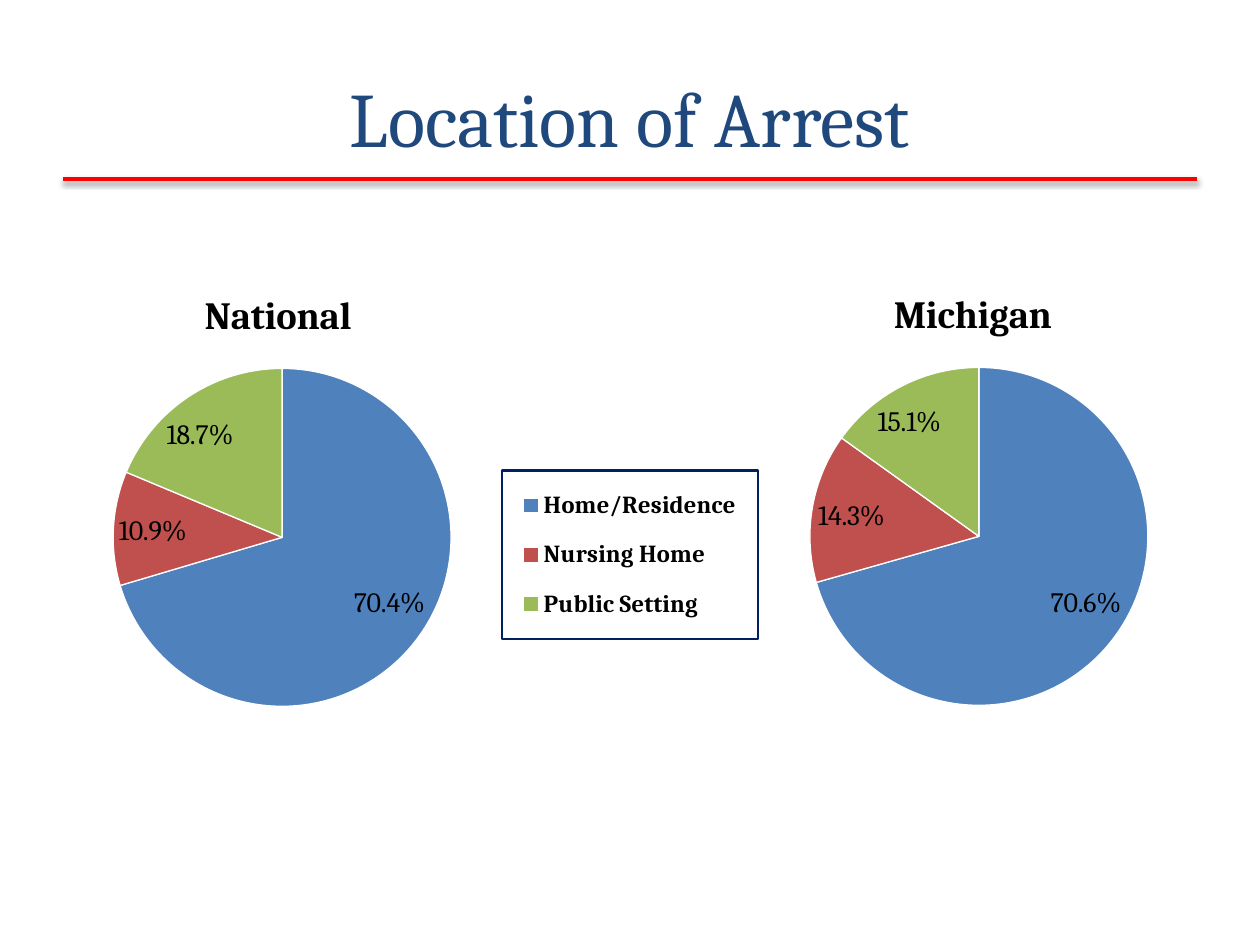
from lxml.etree import SubElement
from pptx import Presentation
from pptx.chart.data import CategoryChartData
from pptx.dml.color import RGBColor
from pptx.enum.chart import XL_CHART_TYPE, XL_LABEL_POSITION, XL_LEGEND_POSITION
from pptx.enum.shapes import MSO_CONNECTOR
from pptx.enum.text import MSO_ANCHOR, PP_ALIGN
from pptx.oxml import parse_xml
from pptx.oxml.ns import nsdecls, qn
from pptx.util import Cm, Pt

FONT = "Cambria"
SLICE_COLORS = ("4F81BD", "C0504D", "9BBB59")
PLOT_LAYOUT = dict(layoutTarget="inner", xMode="edge", yMode="edge",
                   x=0.103, y=0.276, w=0.548, h=0.542)


def color(hex_code):
    return RGBColor.from_string(hex_code)


def set_font(font, size, hex_code, bold=False):
    font.name = FONT
    font.size = Pt(size)
    font.bold = bold
    font.color.rgb = color(hex_code)


def set_layout(parent, settings, after=None):
    for previous in parent.findall(qn("c:layout")):
        parent.remove(previous)
    layout = parse_xml(f"<c:layout {nsdecls('c')}/>")
    manual = SubElement(layout, qn("c:manualLayout"))
    for key, value in settings.items():
        SubElement(manual, qn(f"c:{key}")).set("val", str(value))
    position = 0 if after is None else parent.index(parent.find(qn(after))) + 1
    parent.insert(position, layout)


def add_title(slide, text):
    title = slide.shapes.title
    title.left, title.top = Cm(1.27), Cm(0.76)
    title.width, title.height = Cm(22.86), Cm(3.18)
    title.text_frame.text = text
    title.text_frame.vertical_anchor = MSO_ANCHOR.MIDDLE
    heading = title.text_frame.paragraphs[0]
    heading.alignment = PP_ALIGN.CENTER
    set_font(heading.font, 44, "1F497D")


def add_title_rule(slide):
    rule = slide.shapes.add_connector(
        MSO_CONNECTOR.STRAIGHT, Cm(1.27), Cm(3.61), Cm(24.13), Cm(3.61))
    rule.line.color.rgb = color("FF0000")
    rule.line.width = Pt(2)
    rule._element.spPr.append(parse_xml(
        f"<a:effectLst {nsdecls('a')}>"
        f'<a:outerShdw blurRad="{Pt(3.1)}" dist="{Pt(1.6)}" dir="5400000" rotWithShape="0">'
        '<a:srgbClr val="000000"><a:alpha val="38000"/></a:srgbClr>'
        "</a:outerShdw></a:effectLst>"))


def add_pie(slide, region, categories, shares, box, title_x):
    data = CategoryChartData()
    data.categories = categories
    data.add_series("Series 1", shares)
    chart = slide.shapes.add_chart(
        XL_CHART_TYPE.PIE, *(Cm(length) for length in box), data).chart
    set_font(chart.font, 18, "000000")
    chart.has_legend = False

    chart.has_title = True
    heading = chart.chart_title.text_frame
    heading.text = region
    set_font(heading.paragraphs[0].font, 22, "000000", bold=True)
    chart.chart_title.include_in_layout = False
    set_layout(chart.chart_title._element,
               dict(xMode="edge", yMode="edge", x=title_x, y=0.14), "c:tx")
    set_layout(chart._chartSpace.chart.plotArea, PLOT_LAYOUT)

    pie = chart.plots[0]
    pie.vary_by_categories = True
    for index, slice_color in enumerate(SLICE_COLORS):
        area = pie.series[0].points[index].format
        area.fill.solid()
        area.fill.fore_color.rgb = color(slice_color)
        area.line.color.rgb = color("FFFFFF")
        area.line.width = Pt(0.75)

    labels = pie.series[0].data_labels
    labels.show_percentage = True
    labels.show_value = False
    labels.number_format = "0.0%"
    labels.number_format_is_linked = False
    labels.position = XL_LABEL_POSITION.BEST_FIT
    set_font(labels.font, 16, "000000")
    return chart


def add_legend(chart):
    chart.has_legend = True
    legend = chart.legend
    legend.position = XL_LEGEND_POSITION.RIGHT
    legend.include_in_layout = False
    set_font(legend.font, 14, "000000", bold=True)
    set_layout(legend._element,
               dict(xMode="edge", yMode="edge", x=0.656, y=0.44, w=0.325, h=0.27),
               "c:legendPos")
    legend._element.find(qn("c:overlay")).addnext(parse_xml(
        f"<c:spPr {nsdecls('c', 'a')}><a:ln w=\"{Pt(1.5)}\"><a:solidFill>"
        '<a:srgbClr val="002060"/></a:solidFill></a:ln></c:spPr>'))


def main():
    deck = Presentation()
    deck.slide_width, deck.slide_height = Cm(25.4), Cm(19.05)
    slide = deck.slides.add_slide(deck.slide_layouts[5])
    add_title_rule(slide)
    add_title(slide, "Location of Arrest")
    national = add_pie(
        slide, "National", ("Home/Residence", "Nursing Home", "Public Setting"),
        (70.4, 10.9, 18.7), (-0.3, 3.96, 15.88, 12.57), 0.27)
    add_legend(national)
    add_pie(slide, "Michigan", ("1", "2", "3"),
            (70.6, 14.3, 15.1), (14.81, 3.94, 13.06, 12.57), 0.235)
    deck.save("out.pptx")


if __name__ == "__main__":
    main()
